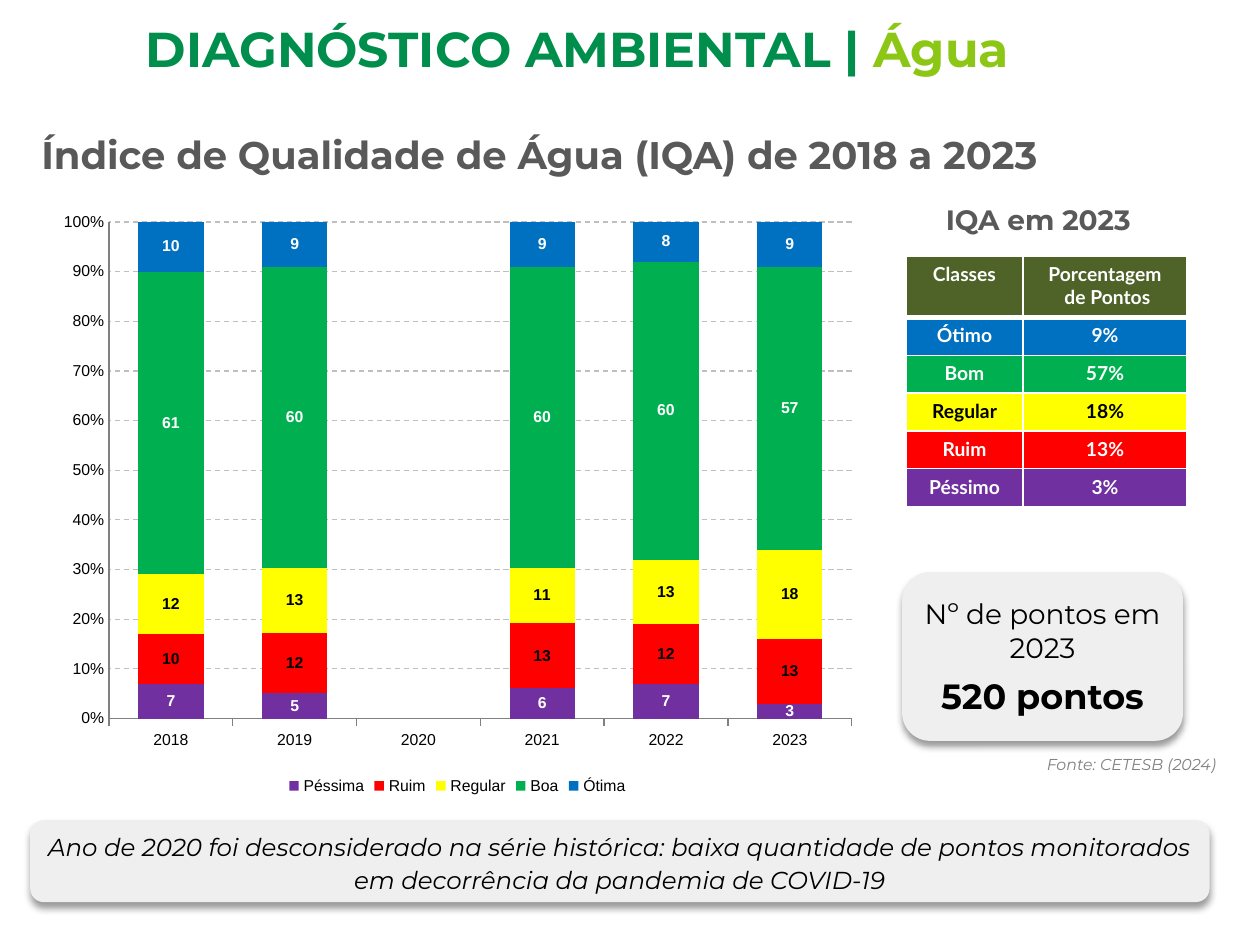
"""Builds the water quality index slide: stacked chart, class table and callouts."""
import pptx
import pptx.chart.data
import pptx.dml.color
import pptx.enum.chart
import pptx.enum.dml
import pptx.enum.shapes
import pptx.enum.text
import pptx.oxml
import pptx.oxml.ns
import pptx.util
from lxml import etree

Inches, Pt = pptx.util.Inches, pptx.util.Pt
CENTER = pptx.enum.text.PP_ALIGN.CENTER
NS = pptx.oxml.ns.nsdecls("a", "c")
W, H = 10, 7.5

COLORS = {
    "purple": "7030A0", "red": "FF0000", "yellow": "FFFF00", "green": "00B050",
    "blue": "0070C0", "olive": "4F6228", "white": "FFFFFF", "black": "000000",
    "heading": "595959", "source": "808080", "grid": "BFBFBF", "panel": "EFEFEF",
    "title": "008E4D", "accent": "8DC715",
}
YEARS = ["2018", "2019", "2020", "2021", "2022", "2023"]
SERIES = [
    ("Péssima", "purple", "white", (7, 5, None, 6, 7, 3)),
    ("Ruim", "red", "black", (10, 12, None, 13, 12, 13)),
    ("Regular", "yellow", "black", (12, 13, None, 11, 13, 18)),
    ("Boa", "green", "white", (61, 60, None, 60, 60, 57)),
    ("Ótima", "blue", "white", (10, 9, None, 9, 8, 9)),
]
CLASSES = [
    ("Classes", "Porcentagem\n de Pontos", "olive", "white"),
    ("Ótimo", "9%", "blue", "white"),
    ("Bom", "57%", "green", "white"),
    ("Regular", "18%", "yellow", "black"),
    ("Ruim", "13%", "red", "white"),
    ("Péssimo", "3%", "purple", "white"),
]
COLUMNS, HEADER_H, ROW_H = (0.93, 1.3), 0.49, 0.3
TITLE = [("DIAGNÓSTICO AMBIENTAL | ", "title"), ("Água", "accent")]
TEXTS = [
    ((-0.15, 0.99, 9.36, 0.52), "Índice de Qualidade de Água (IQA) de 2018 a 2023",
     22, "heading", dict(bold=True, indent=0.38)),
    ((6.89, 1.56, 2.68, 0.32), "IQA em 2023",
     16, "heading", dict(bold=True, indent=0.02, align=CENTER)),
    ((8.21, 5.94, 1.6, 0.25), "Fonte: CETESB (2024)",
     9, "source", dict(italic=True, wrap=False)),
]
NOTE = ("Ano de 2020 foi desconsiderado na série histórica: baixa quantidade de "
        "pontos monitorados em decorrência da pandemia de COVID-19")
PANELS = [
    ((0.24, 6.51, 9.36, 0.65), [(NOTE, 14, False, True)], 1.14),
    ((7.16, 4.54, 2.23, 1.34),
     [("Nº de pontos em 2023", 16, False, False), ("520 pontos", 20, True, False)], None),
]
PLOT = {"x": 0.076, "y": 0.034, "w": 0.904, "h": 0.83}


def rgb(name):
    return pptx.dml.color.RGBColor.from_string(COLORS[name])


def box(at):
    return [Inches(v) for v in at]


def style(font, size, color, bold=False, italic=False, name="Montserrat"):
    font.size, font.name, font.bold, font.italic = Pt(size), name, bold, italic
    font.color.rgb = rgb(color)


def add_text(s, at, text, size, color, bold=False, italic=False, indent=0, align=None, wrap=True):
    tf = s.shapes.add_textbox(*box(at)).text_frame
    tf.word_wrap = wrap
    p = tf.paragraphs[0]
    p.text = text
    p.alignment = align
    if indent:
        p._p.get_or_add_pPr().set("marL", str(Inches(indent)))
    style(p.font, size, color, bold, italic)


def add_title(s):
    tf = s.shapes.add_textbox(*box((1.06, 0.1, 8.75, 0.57))).text_frame
    tf.word_wrap = True
    p = tf.paragraphs[0]
    for text, color in TITLE:
        r = p.add_run()
        r.text = text
        style(r.font, 28, color, bold=True)


def add_panel(s, at, lines, spacing):
    sp = s.shapes.add_shape(pptx.enum.shapes.MSO_SHAPE.ROUNDED_RECTANGLE, *box(at))
    sp.fill.solid()
    sp.fill.fore_color.rgb = rgb("panel")
    sp.line.fill.background()
    sp.shadow.inherit = False
    effects = sp._element.spPr.find(pptx.oxml.ns.qn("a:effectLst"))
    effects.append(pptx.oxml.parse_xml(
        f'<a:outerShdw {NS} blurRad="{Pt(4)}" dist="{Pt(3)}" dir="5400000" rotWithShape="0">'
        f'<a:srgbClr val="{COLORS["black"]}"><a:alpha val="40000"/></a:srgbClr></a:outerShdw>'))
    tf = sp.text_frame
    tf.word_wrap = True
    tf.vertical_anchor = pptx.enum.text.MSO_ANCHOR.MIDDLE
    for i, (text, size, bold, italic) in enumerate(lines):
        p = tf.add_paragraph() if i else tf.paragraphs[0]
        p.text, p.alignment = text, CENTER
        if spacing:
            p.line_spacing = spacing
        if i:
            p.space_before = Pt(0.3 * size)
        style(p.font, size, "black", bold, italic)


def add_classes(s):
    at = (7.19, 2.03, sum(COLUMNS), HEADER_H + ROW_H * (len(CLASSES) - 1))
    table = s.shapes.add_table(len(CLASSES), len(COLUMNS), *box(at)).table
    table.horz_banding = False
    for column, width in zip(table.columns, COLUMNS):
        column.width = Inches(width)
    for i, (*texts, fill, color) in enumerate(CLASSES):
        table.rows[i].height = Inches(ROW_H if i else HEADER_H)
        widths = {"L": 1, "R": 1, "T": 3 if i == 1 else 1, "B": 1 if i else 3}
        for cell, text in zip(table.rows[i].cells, texts):
            tcPr = cell._tc.get_or_add_tcPr()
            for side, width in widths.items():
                tcPr.append(pptx.oxml.parse_xml(
                    f'<a:ln{side} {NS} w="{Pt(width)}"><a:solidFill>'
                    f'<a:srgbClr val="{COLORS["white"]}"/></a:solidFill></a:ln{side}>'))
            cell.fill.solid()
            cell.fill.fore_color.rgb = rgb(fill)
            cell.text = text
            for p in cell.text_frame.paragraphs:
                p.alignment = CENTER
                style(p.font, 11, color, bold=True, name="Lato")


def add_index_chart(s):
    enum = pptx.enum.chart
    data = pptx.chart.data.CategoryChartData()
    data.categories = YEARS
    for name, _, _, values in SERIES:
        data.add_series(name, values)
    chart = s.shapes.add_chart(enum.XL_CHART_TYPE.COLUMN_STACKED_100,
                               *box((0.37, 1.6, 6.52, 4.75)), data).chart
    style(chart.font, 9, "black", name="Arial")
    chart.has_title = False
    chart.has_legend = True
    chart.legend.position = enum.XL_LEGEND_POSITION.BOTTOM
    chart.legend.include_in_layout = False
    plot = chart.plots[0]
    plot.gap_width, plot.overlap, plot.vary_by_categories = 90, 100, False
    for series, (_, fill, label, _) in zip(plot.series, SERIES):
        series.format.fill.solid()
        series.format.fill.fore_color.rgb = rgb(fill)
        labels = series.data_labels
        labels.show_value = True
        style(labels.font, 9, label, bold=True, name="Arial")
    cat, val = chart.category_axis, chart.value_axis
    cat.major_tick_mark = enum.XL_TICK_MARK.OUTSIDE
    val.major_tick_mark = enum.XL_TICK_MARK.NONE
    val.minimum_scale, val.maximum_scale, val.major_unit = 0, 1, 0.1
    val.tick_labels.number_format = "0%"
    val.tick_labels.number_format_is_linked = False
    grid = val.major_gridlines.format.line
    for line, color in ((cat.format.line, "source"), (val.format.line, "source"), (grid, "grid")):
        line.color.rgb, line.width = rgb(color), Pt(0.75)
    grid.dash_style = pptx.enum.dml.MSO_LINE.DASH
    area = plot._element.getparent()
    for old in area.findall(pptx.oxml.ns.qn("c:layout")):
        area.remove(old)
    modes = "".join(f'<c:{k}Mode val="edge"/>' for k in "xy")
    sizes = "".join(f'<c:{k} val="{v}"/>' for k, v in PLOT.items())
    area.insert(0, etree.fromstring(
        f'<c:layout {NS}><c:manualLayout><c:layoutTarget val="inner"/>'
        f'{modes}{sizes}</c:manualLayout></c:layout>'))


def main():
    prs = pptx.Presentation()
    prs.slide_width, prs.slide_height = Inches(W), Inches(H)
    s = prs.slides.add_slide(prs.slide_layouts[6])
    add_index_chart(s)
    add_classes(s)
    for panel in PANELS:
        add_panel(s, *panel)
    for at, text, size, color, options in TEXTS:
        add_text(s, at, text, size, color, **options)
    add_title(s)
    prs.save("out.pptx")


if __name__ == "__main__":
    main()
